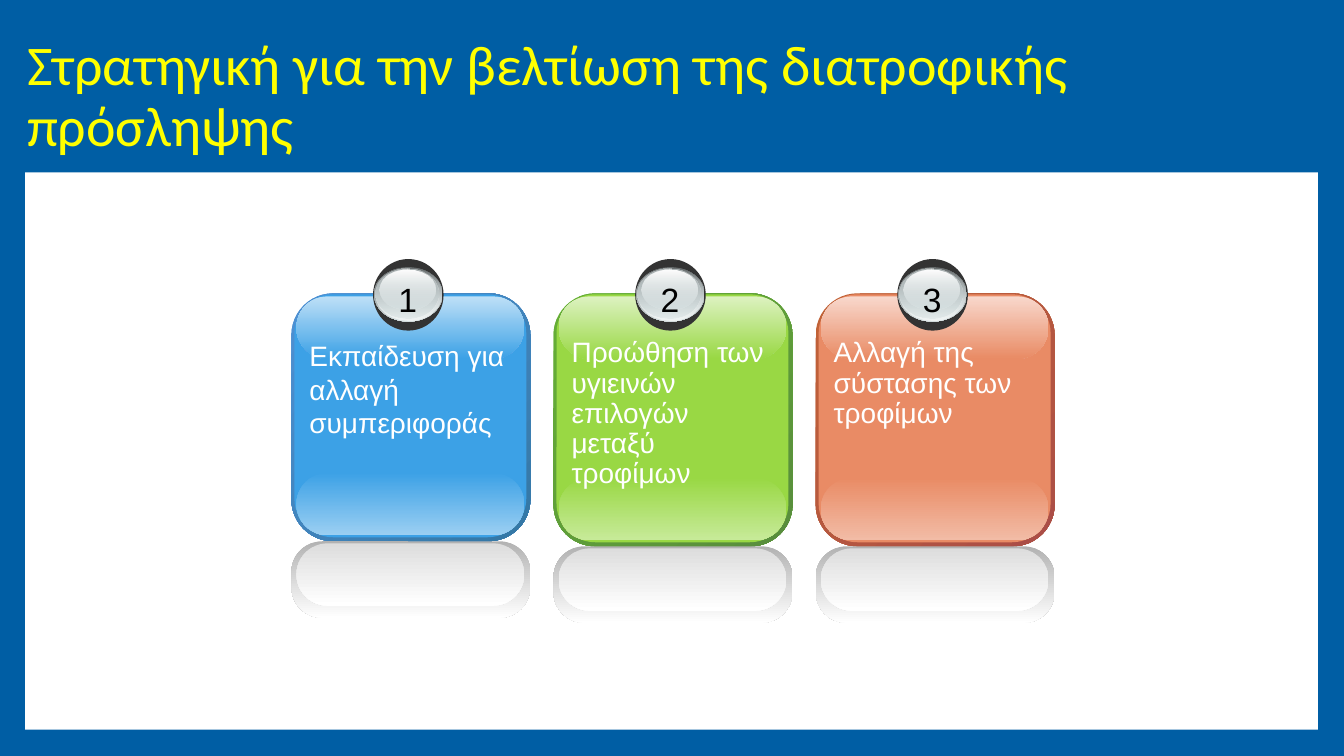
"""Build a slide with three numbered glossy cards on ways to improve dietary intake."""
from dataclasses import dataclass
from typing import Any, NamedTuple

from lxml.etree import SubElement
from pptx import Presentation
from pptx.dml.color import RGBColor
from pptx.enum.shapes import MSO_SHAPE as Preset
from pptx.enum.text import MSO_ANCHOR as Anchor, MSO_AUTO_SIZE as AutoSize, PP_ALIGN as Align
from pptx.oxml.ns import qn
from pptx.util import Inches, Pt

BLUE = "005EA4"
YELLOW = "FFFF00"
WHITE = "FFFFFF"
BLACK = "000000"
SILVER = "D6E1E2"
CARD_LEFT, CARD_TOP, CARD_STEP = 2.89, 2.91, 2.6
BADGE_X, BADGE_Y = 0.81, -0.34


class Box(NamedTuple):
    left: float
    top: float
    width: float
    height: float


class Stop(NamedTuple):
    colour: str
    opacity: int = 100


class Gradient(NamedTuple):
    start: Stop
    end: Stop
    angle: int = 90


Paint = str | Gradient


@dataclass(frozen=True)
class Layer:
    box: Box
    paint: Paint
    rounding: float | None = None


@dataclass(frozen=True)
class Card:
    text: str
    height: float
    text_height: float
    line_spacing: float
    rim: Gradient
    face: str
    shine: str
    glow: str


CARDS = [
    Card("Εκπαίδευση για αλλαγή συμπεριφοράς", 2.46, 1.1, 1.0,
         Gradient(Stop("4E91D4"), Stop("3477A4"), 45), "3CA1E6", "BEE0F7", "9BCFF2"),
    Card("Προώθηση των υγιεινών επιλογών μεταξύ τροφίμων", 2.51, 1.6, 0.9,
         Gradient(Stop("66AF35"), Stop("588D3D"), 45), "99D844", "DDF2C1", "C7EA99"),
    Card("Αλλαγή της σύστασης των τροφίμων", 2.51, 1.0, 0.9,
         Gradient(Stop("C16237"), Stop("AB4E47"), 45), "E98B65", "F8D8CC", "F2BCA6"),
]

BADGE_LAYERS = [
    Layer(Box(0, 0, 0.7, 0.71), "333333"),
    Layer(Box(0.01, 0.08, 0.68, 0.54), Gradient(Stop("636869"), Stop(SILVER))),
    Layer(Box(0.02, 0.08, 0.66, 0.53), Gradient(Stop(SILVER, 0), Stop("F1F5F5"))),
    Layer(Box(0.02, 0.09, 0.63, 0.5), Gradient(Stop("AAB2B3"), Stop(SILVER, 48))),
    Layer(Box(0.06, 0.1, 0.56, 0.4), Gradient(Stop(WHITE), Stop(SILVER, 38))),
]


def rgb(colour: str) -> RGBColor:
    """Turn a hex string into a colour."""
    return RGBColor.from_string(colour)


def set_all(target: Any, values: dict[str, Any]) -> None:
    """Set every named attribute on the target."""
    for name, value in values.items():
        setattr(target, name, value)


def place(box: Box, left: float, top: float) -> Box:
    """Move a box by an offset."""
    return box._replace(left=box.left + left, top=box.top + top)


def paint_shape(shape: Any, paint: Paint) -> None:
    """Fill a shape with a plain colour or a gradient."""
    if isinstance(paint, str):
        shape.fill.solid()
        shape.fill.fore_color.rgb = rgb(paint)
        return
    shape.fill.gradient()
    shape.fill.gradient_angle = 360 - paint.angle
    for stop, values in zip(shape.fill.gradient_stops, (paint.start, paint.end)):
        stop.color.rgb = rgb(values.colour)
        stop.position = 0.0 if values is paint.start else 1.0
    colours = shape._element.spPr.iter(qn("a:srgbClr"))
    for colour, values in zip(colours, (paint.start, paint.end)):
        if values.opacity < 100:
            SubElement(colour, qn("a:alpha"), val=str(values.opacity * 1000))


def add_layer(shapes: Any, preset: Preset, layer: Layer, left: float = 0, top: float = 0) -> None:
    """Draw one unlined layer at an offset."""
    shape = shapes.add_shape(preset, *map(Inches, place(layer.box, left, top)))
    shape.shadow.inherit = False
    shape.line.fill.background()
    if layer.rounding is not None:
        shape.adjustments[0] = layer.rounding
    paint_shape(shape, layer.paint)


def add_text(shapes: Any, box: Box, text: str, font: dict[str, Any],
             paragraph_format: dict[str, Any], frame_format: dict[str, Any]) -> None:
    """Draw one paragraph of text in a box."""
    frame = shapes.add_textbox(*map(Inches, box)).text_frame
    set_all(frame, {"word_wrap": True} | frame_format)
    paragraph = frame.paragraphs[0]
    set_all(paragraph, paragraph_format)
    run = paragraph.add_run()
    run.text = text
    colour = font["colour"]
    set_all(run.font, {"name": font["name"], "size": Pt(font["size"])})
    run.font.color.rgb = rgb(colour)


def card_layers(card: Card) -> list[Layer]:
    """List the rounded layers of a card, relative to its corner."""
    height = card.height
    return [
        Layer(Box(0, 0, 2.37, height), card.rim, 0.175),
        Layer(Box(0.03, 0.01, 2.3, height - 0.05), card.face, 0.167),
        Layer(Box(0.05, height - 0.68, 2.26, 0.62),
              Gradient(Stop(card.face), Stop(card.glow)), 0.5),
        Layer(Box(0.05, 0.03, 2.26, 0.62),
              Gradient(Stop(card.shine), Stop(card.face)), 0.5),
        Layer(Box(0, height, 2.37, 0.76), Gradient(Stop("B2B2B2"), Stop(WHITE)), 0.404),
        Layer(Box(0.05, height + 0.02, 2.26, 0.62),
              Gradient(Stop("DDDDDD"), Stop(WHITE)), 0.5),
    ]


def add_card(slide: Any, index: int, card: Card) -> None:
    """Draw a card with its reflection, numbered badge and text."""
    left = CARD_LEFT + index * CARD_STEP
    shapes = slide.shapes.add_group_shape().shapes
    for layer in card_layers(card):
        add_layer(shapes, Preset.ROUNDED_RECTANGLE, layer, left, CARD_TOP)
    for layer in BADGE_LAYERS:
        add_layer(shapes, Preset.OVAL, layer, left + BADGE_X, CARD_TOP + BADGE_Y)
    add_text(shapes, Box(left + 0.96, 2.72, 0.39, 0.5), str(index + 1),
             {"name": "Arial", "size": 24, "colour": BLACK}, {"alignment": Align.CENTER},
             {"word_wrap": False, "auto_size": AutoSize.SHAPE_TO_FIT_TEXT})
    add_text(shapes, Box(left + 0.08, 3.31, 2.25, card.text_height), card.text,
             {"name": "Arial", "size": 20, "colour": WHITE},
             {"line_spacing": card.line_spacing}, {"auto_size": AutoSize.SHAPE_TO_FIT_TEXT})


def main() -> None:
    """Build and save the presentation."""
    presentation = Presentation()
    set_all(presentation, {"slide_width": Inches(13.33), "slide_height": Inches(7.5)})
    slide = presentation.slides.add_slide(presentation.slide_layouts[6])
    slide.background.fill.solid()
    slide.background.fill.fore_color.rgb = rgb(BLUE)
    title_box = Box(0.17, 0.23, 12.98, 1.48)
    add_layer(slide.shapes, Preset.RECTANGLE, Layer(Box(0.25, 0.27, 12.82, 6.97), WHITE))
    add_layer(slide.shapes, Preset.RECTANGLE, Layer(title_box, BLUE))
    add_text(slide.shapes, title_box, "Στρατηγική για την βελτίωση της διατροφικής πρόσληψης",
             {"name": "Calibri", "size": 40, "colour": YELLOW},
             {"line_spacing": 0.9}, {"vertical_anchor": Anchor.MIDDLE})
    for index, card in enumerate(CARDS):
        add_card(slide, index, card)
    presentation.save("out.pptx")


if __name__ == "__main__":
    main()
